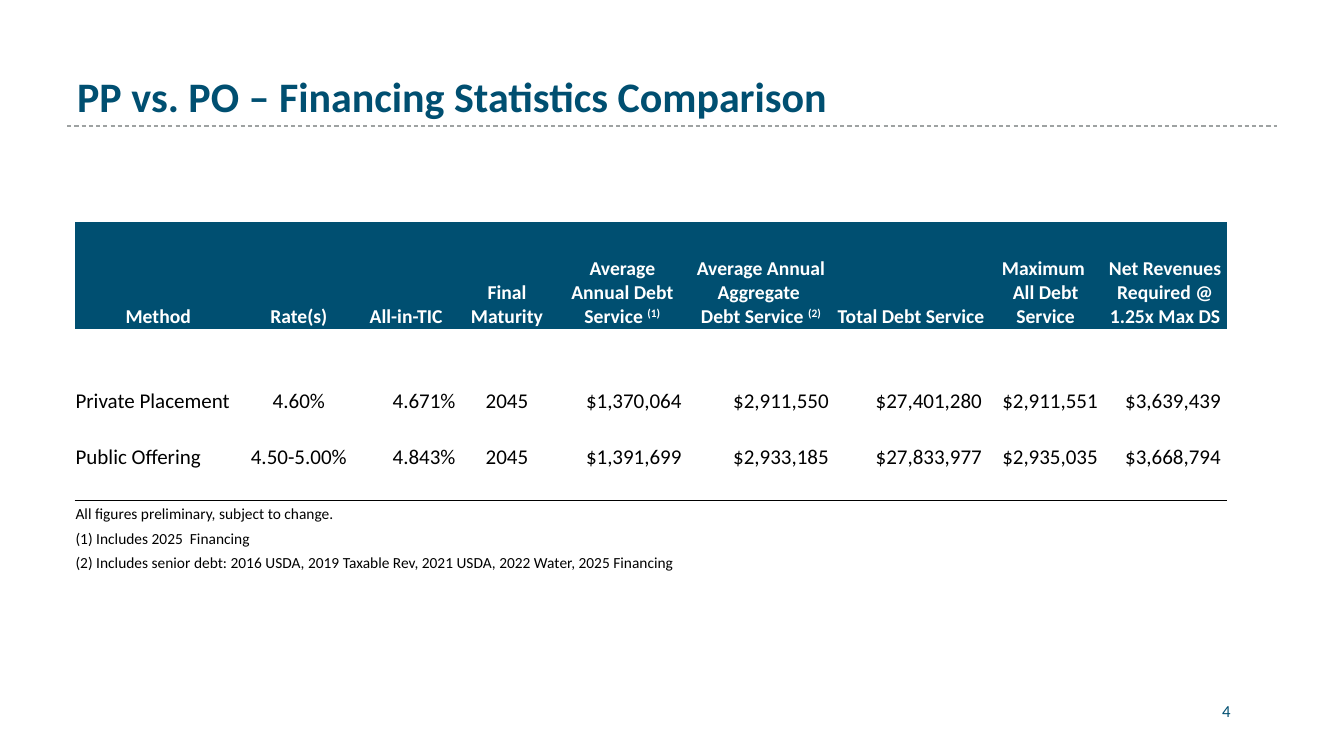
import lxml.etree
import pptx
import pptx.dml.color
import pptx.enum.dml
import pptx.enum.shapes
import pptx.enum.text
import pptx.oxml.ns
import pptx.util

qn = pptx.oxml.ns.qn
add = lxml.etree.SubElement
ALIGN = pptx.enum.text.PP_ALIGN
ANCHOR = pptx.enum.text.MSO_ANCHOR
HUES = {"blue": "004F71", "gray": "9EA2A2", "white": "FFFFFF", "black": "000000"}
hue = {name: pptx.dml.color.RGBColor.from_string(code) for name, code in HUES.items()}

deck = pptx.Presentation()
deck.slide_width = pptx.util.Inches(13.33)
deck.slide_height = pptx.util.Inches(7.5)
COL = deck.slide_width / 40
ROW = deck.slide_height / 30
slide = deck.slides.add_slide(deck.slide_layouts[6])


def write(frame, text, size=15, color="black", bold=False, align=ALIGN.LEFT):
    """Fill a frame: newline splits paragraphs, \\v breaks a line, ^ marks superscript."""
    frame.word_wrap = True
    for i, line in enumerate(text.split("\n")):
        para = frame.add_paragraph() if i else frame.paragraphs[0]
        para.alignment = align
        for j, part in enumerate(line.split("^")):
            for k, piece in enumerate(part.split("\v")):
                if k:
                    para.add_line_break()
                if not piece:
                    continue
                run = para.add_run()
                run.text = piece
                run.font.name = "Calibri"
                run.font.size = pptx.util.Pt(size)
                run.font.bold = bold
                run.font.color.rgb = hue[color]
                if j % 2:
                    run.font._element.set("baseline", "30000")
        # An empty cell takes its height from the end mark
        add(para._p, qn("a:endParaRPr"), sz=str(size * 100))


def place(left, top, wide, high):
    return [int(n) for n in (left * COL, top * ROW, wide * COL, high * ROW)]


# Title, rule and page number
rule = slide.shapes.add_connector(
    pptx.enum.shapes.MSO_CONNECTOR.STRAIGHT,
    int(2 * COL), int(5 * ROW), int(38 * COL), int(5 * ROW))
rule.line.color.rgb = hue["gray"]
rule.line.width = pptx.util.Pt(0.75)
rule.line.dash_style = pptx.enum.dml.MSO_LINE.DASH
add(rule._element.spPr, qn("a:effectLst"))

title = slide.shapes.add_textbox(*place(2, 1, 36, 4)).text_frame
title.vertical_anchor = ANCHOR.BOTTOM
write(title, "PP vs. PO – Financing Statistics Comparison", size=30, color="blue", bold=True)

page = slide.shapes.add_textbox(*place(35, 27.6, 3, 1.6)).text_frame
write(page, "4", size=12, color="blue", align=ALIGN.CENTER)

# Table
HEADS = [
    "Method", "Rate(s)", "All-in-TIC", "Final Maturity",
    "Average Annual Debt Service ^(1)",
    "Average Annual Aggregate \vDebt Service ^(2)",
    "Total Debt Service", "Maximum \nAll Debt Service",
    "Net Revenues Required @ 1.25x Max DS",
]
LOANS = [
    ["Private Placement", "4.60%", "4.671%", "2045", "$1,370,064 ",
     "$2,911,550 ", "$27,401,280 ", "$2,911,551 ", "$3,639,439 "],
    ["Public Offering", "4.50-5.00%", "4.843%", "2045", "$1,391,699 ",
     "$2,933,185 ", "$27,833,977 ", "$2,935,035 ", "$3,668,794 "],
]
NOTES = [
    ("All figures preliminary, subject to change.", 3),
    ("(1) Includes 2025  Financing", 2),
    ("(2) Includes senior debt: 2016 USDA, 2019 Taxable Rev, 2021 USDA, "
     "2022 Water, 2025 Financing", 7),
]
WIDTHS = [4.98, 3.39, 3, 3, 3.87, 4.38, 4.56, 3.45, 3.66]
HEIGHTS = [4.24, 3.4, 3.4] + [0.96] * len(NOTES)
SIDES = [ALIGN.LEFT, ALIGN.CENTER, ALIGN.RIGHT, ALIGN.CENTER] + [ALIGN.RIGHT] * 5

grid = slide.shapes.add_table(
    len(HEIGHTS), len(WIDTHS), *place(2.22, 8.8, sum(WIDTHS), sum(HEIGHTS))).table
grid.first_row = grid.horz_banding = False
plain = "{2D5ABB26-0587-4C30-8999-92F81FD0307C}"
grid._tbl.tblPr.find(qn("a:tableStyleId")).text = plain
for col, wide in zip(grid.columns, WIDTHS):
    col.width = int(wide * COL)
for row, high in zip(grid.rows, HEIGHTS):
    row.height = int(high * ROW)

blank = [""] * (len(WIDTHS) - 1)
cells = [HEADS] + LOANS + [[note] + blank for note, span in NOTES]
last = len(LOANS)
for r, texts in enumerate(cells):
    for c, text in enumerate(texts):
        cell = grid.cell(r, c)
        cell.margin_left = cell.margin_right = cell.margin_top = pptx.util.Inches(0.01)
        cell.margin_bottom = 0
        cell.vertical_anchor = ANCHOR.MIDDLE if r == last else ANCHOR.BOTTOM
        if r == 0:
            cell.fill.solid()
            cell.fill.fore_color.rgb = hue["blue"]
            look = {"size": 14, "color": "white", "bold": True, "align": ALIGN.CENTER}
        else:
            cell.fill.background()
            look = {"align": SIDES[c]} if r <= last else {"size": 11}
        write(cell.text_frame, text, **look)
        if r == last:
            props = cell._tc.get_or_add_tcPr()
            edge = add(props, qn("a:lnB"), w=str(pptx.util.Pt(0.5)))
            add(add(edge, qn("a:solidFill")), qn("a:srgbClr"), val=HUES["black"])
            props.insert(0, edge)

for r, (note, span) in enumerate(NOTES, last + 1):
    grid.cell(r, 0).merge(grid.cell(r, span - 1))

deck.save("out.pptx")
